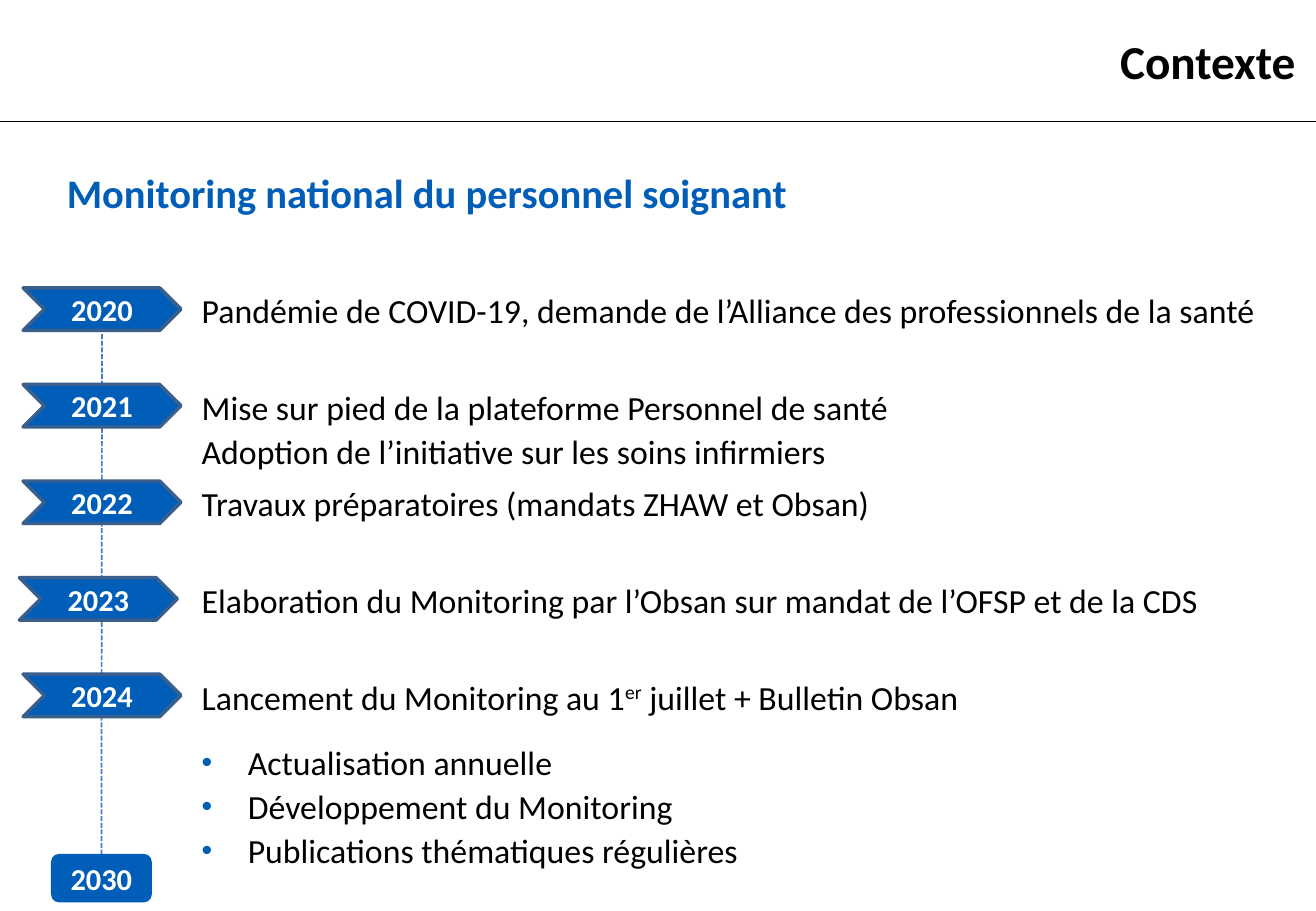
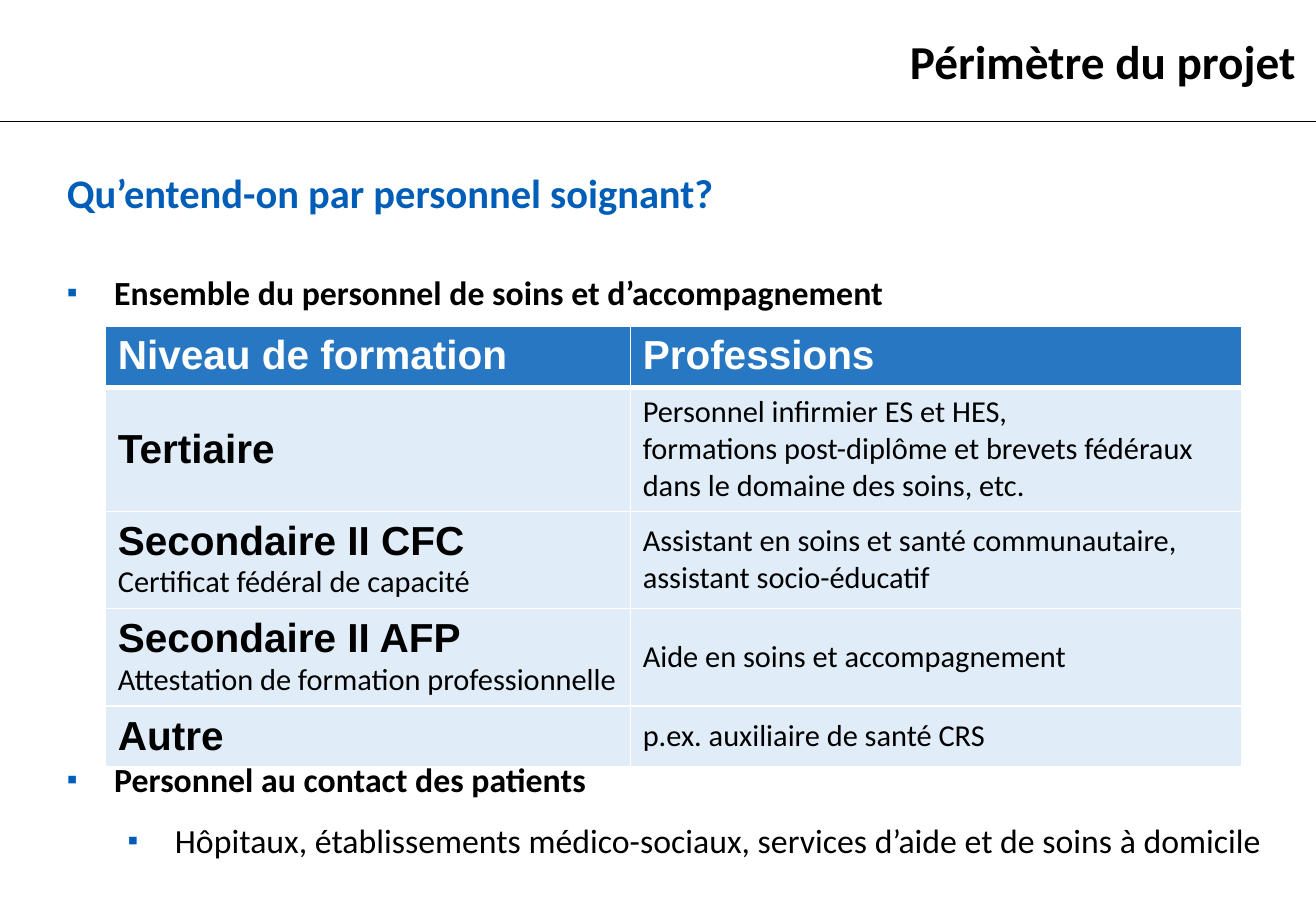
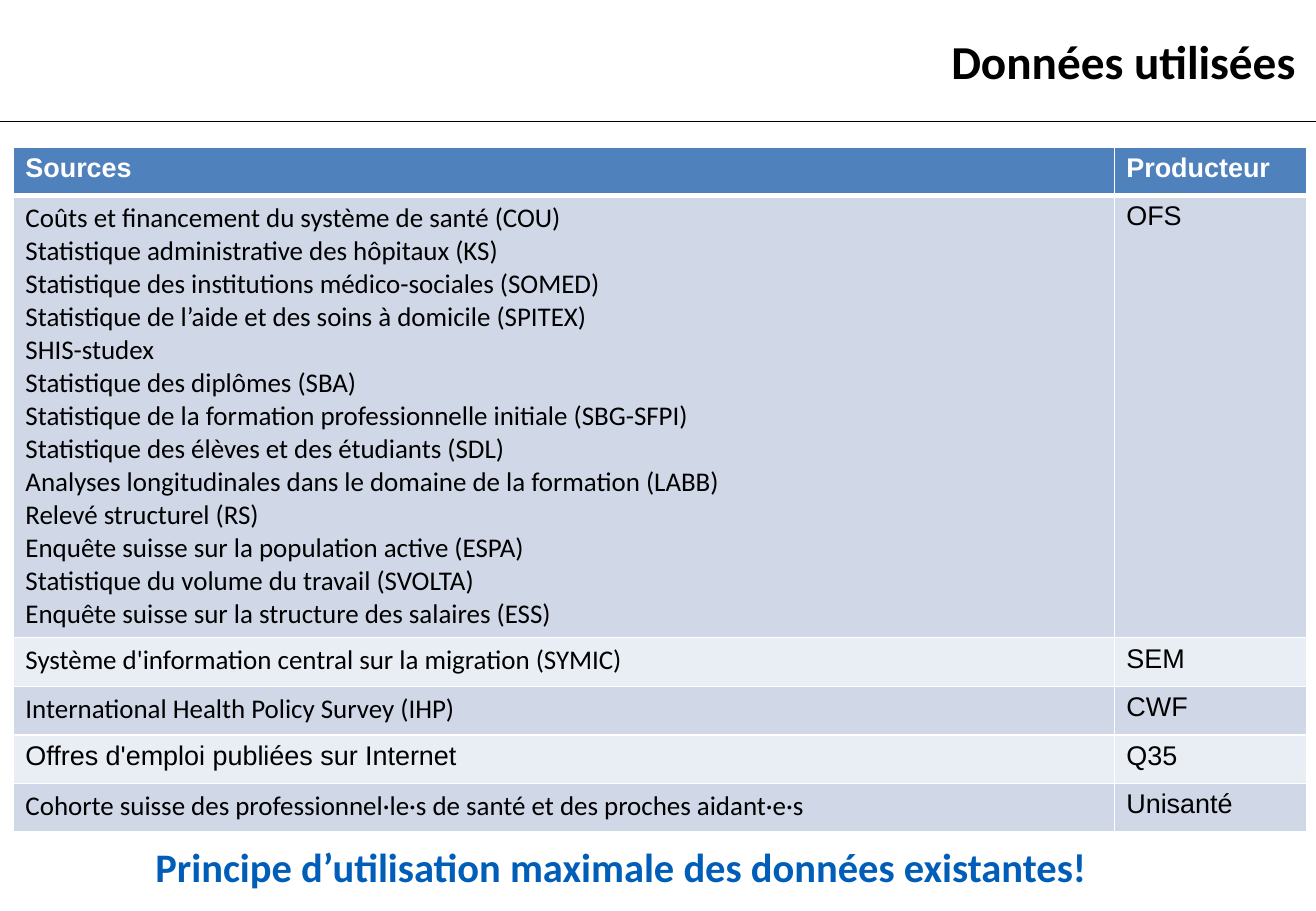
from dataclasses import dataclass
from typing import NamedTuple

from lxml.etree import SubElement
from pptx import Presentation
from pptx.dml.color import RGBColor
from pptx.enum.dml import MSO_LINE
from pptx.enum.shapes import MSO_CONNECTOR, MSO_SHAPE
from pptx.enum.text import MSO_ANCHOR, MSO_AUTO_SIZE, PP_ALIGN
from pptx.oxml.ns import qn
from pptx.util import Inches, Pt


class Style(NamedTuple):
    """Font settings of a run."""
    size: int
    color: str = "000000"
    bold: bool = False
    font: str = "Calibri"


class Run(NamedTuple):
    """Text with its own style, list level and superscript flag."""
    text: str
    style: Style
    level: int = 0
    raised: bool = False


@dataclass(frozen=True)
class Theme:
    """Colours and type styles shared by all slides."""
    accent: str = "005EB8"
    black: str = "000000"
    white: str = "FFFFFF"
    outline: str = "3A5F8C"
    timeline: str = "4B7EBC"
    level_header: str = "2777C3"
    level_body: str = "E0EDF8"
    source_header: str = "4F81BD"
    source_bands: tuple = ("D0D8E8", "E9EDF4")
    title: Style = Style(28, bold=True)
    subtitle: Style = Style(24, "005EB8", True)
    body: Style = Style(20)
    strong: Style = Style(20, bold=True)
    year: Style = Style(18, "FFFFFF", True)
    level_heading: Style = Style(24, "FFFFFF", True, "Arial")
    level_name: Style = Style(24, bold=True, font="Arial")
    level_text: Style = Style(18)
    source_heading: Style = Style(16, "FFFFFF", True, "Arial")
    source: Style = Style(16)
    producer: Style = Style(16, font="Arial")


THEME = Theme()


def rgb(color):
    """Turn a hex string into a colour."""
    return RGBColor.from_string(color)


def add_bullet(paragraph, symbol, hanging, level):
    """Give a paragraph an accent-coloured bullet and a hanging indent."""
    paragraph.level = level
    properties = paragraph._p.get_or_add_pPr()
    properties.set("marL", str(Inches(hanging + 0.5 * level)))
    properties.set("indent", str(-Inches(hanging)))
    color = SubElement(properties, qn("a:buClr"))
    SubElement(color, qn("a:srgbClr"), val=THEME.accent)
    SubElement(properties, qn("a:buSzPct"), val="90000")
    SubElement(properties, qn("a:buFont"), typeface="Arial")
    SubElement(properties, qn("a:buChar"), char=symbol)


def write(frame, lines, style=None, align=PP_ALIGN.LEFT, line_spacing=None,
          gap=0, bullet=None, hanging=0.39):
    """Fill a text frame with lines, each a string, a Run or a list of Runs."""
    for index, line in enumerate(lines):
        paragraph = frame.add_paragraph() if index else frame.paragraphs[0]
        if isinstance(line, str):
            line = Run(line, style)
        runs = [line] if isinstance(line, Run) else line
        if bullet:
            add_bullet(paragraph, bullet, hanging, runs[0].level)
        paragraph.alignment = align
        paragraph.space_before = Pt(gap if index else 0)
        if line_spacing:
            paragraph.line_spacing = Pt(line_spacing)
        for part in runs:
            run = paragraph.add_run()
            run.text = part.text
            run.font.name = part.style.font
            run.font.size = Pt(part.style.size)
            run.font.bold = part.style.bold
            run.font.color.rgb = rgb(part.style.color)
            if part.raised:
                run._r.get_or_add_rPr().set("baseline", "30000")


def add_borders(cell, **widths):
    """Draw white cell borders with the given widths in points."""
    properties = cell._tc.get_or_add_tcPr()
    for side in ("L", "R", "T", "B"):
        border = SubElement(properties, qn(f"a:ln{side}"),
                            w=str(Pt(widths.get(side, 1))))
        fill = SubElement(border, qn("a:solidFill"))
        SubElement(fill, qn("a:srgbClr"), val=THEME.white)


class Deck:
    """Builds slides in the shared style."""

    def __init__(self):
        """Start an empty presentation."""
        self.presentation = Presentation()
        self.presentation.slide_width = Inches(10.83)
        self.presentation.slide_height = Inches(7.5)
        self.slide = None

    def new_slide(self, title, subtitle=None):
        """Add a slide with its title, rule and optional subtitle."""
        layout = self.presentation.slide_layouts[5]
        self.slide = self.presentation.slides.add_slide(layout)
        shape = self.slide.shapes.title
        shape.left, shape.top = Inches(3.63), Inches(0)
        shape.width, shape.height = Inches(7.13), Inches(1)
        shape.text_frame.auto_size = MSO_AUTO_SIZE.NONE
        shape.text_frame.vertical_anchor = MSO_ANCHOR.MIDDLE
        write(shape.text_frame, [title], THEME.title, PP_ALIGN.RIGHT)
        self.line((0, 1), (10.83, 1), THEME.black)
        if subtitle:
            self.text(0.55, 1.38, 9.34, 0.4, [subtitle], style=THEME.subtitle)

    def line(self, start, end, color, dash=None):
        """Add a straight line one point wide."""
        points = [Inches(value) for value in (*start, *end)]
        connector = self.slide.shapes.add_connector(
            MSO_CONNECTOR.STRAIGHT, *points)
        connector.line.color.rgb = rgb(color)
        connector.line.width = Pt(1)
        if dash:
            connector.line.dash_style = dash
        SubElement(connector._element.spPr, qn("a:effectLst"))
        return connector

    def text(self, left, top, width, height, lines, **text_format):
        """Add a wrapping text box without margins."""
        box = self.slide.shapes.add_textbox(
            Inches(left), Inches(top), Inches(width), Inches(height))
        frame = box.text_frame
        frame.word_wrap = True
        frame.margin_left = frame.margin_right = 0
        frame.margin_top = frame.margin_bottom = 0
        write(frame, lines, **text_format)

    def year(self, kind, left, top, width, height, label, outline=None):
        """Add a filled shape with a year in it."""
        shape = self.slide.shapes.add_shape(
            kind, Inches(left), Inches(top), Inches(width), Inches(height))
        shape.shadow.inherit = False
        shape.fill.solid()
        shape.fill.fore_color.rgb = rgb(THEME.accent)
        if outline:
            shape.line.color.rgb = rgb(outline)
            shape.line.width = Pt(2)
        else:
            shape.line.fill.background()
        shape.text_frame.vertical_anchor = MSO_ANCHOR.MIDDLE
        write(shape.text_frame, [label], THEME.year, PP_ALIGN.CENTER)
        return shape

    def table(self, left, top, columns, heights, rows, header, bands,
              anchor=MSO_ANCHOR.TOP):
        """Add a table whose cells are lists of lines."""
        table = self.slide.shapes.add_table(
            len(rows), len(columns), Inches(left), Inches(top),
            Inches(sum(columns)), Inches(sum(heights))).table
        table.horz_banding = False
        for column, width in zip(table.columns, columns):
            column.width = Inches(width)
        for index, (row, height, contents) in enumerate(
                zip(table.rows, heights, rows)):
            row.height = Inches(height)
            color = bands[(index - 1) % len(bands)] if index else header
            for cell, lines in zip(row.cells, contents):
                add_borders(cell, T=3 if index == 1 else 1,
                            B=1 if index else 3)
                cell.fill.solid()
                cell.fill.fore_color.rgb = rgb(color)
                cell.vertical_anchor = anchor if index else MSO_ANCHOR.TOP
                write(cell.text_frame, lines)


def build_context(deck):
    """Build the timeline slide."""
    deck.new_slide("Contexte", "Monitoring national du personnel soignant")
    goal = deck.year(MSO_SHAPE.ROUNDED_RECTANGLE, 0.42, 7.03, 0.83, 0.4, "2030")
    axis = deck.line((0.84, 2.75), (0.84, 7.03), THEME.timeline,
                     MSO_LINE.SQUARE_DOT)
    axis.end_connect(goal, 0)
    body = THEME.body
    launch = [Run("Lancement du Monitoring au 1", body),
              Run("er", body, raised=True),
              Run(" juillet + Bulletin Obsan", body)]
    events = [
        ("2020", 0.19, ["Pandémie de COVID-19, demande de l’Alliance des "
                        "professionnels de la santé"]),
        ("2021", 0.19, ["Mise sur pied de la plateforme Personnel de santé",
                        "Adoption de l’initiative sur les soins infirmiers"]),
        ("2022", 0.19, ["Travaux préparatoires (mandats ZHAW et Obsan)"]),
        ("2023", 0.16, ["Elaboration du Monitoring par l’Obsan sur mandat de "
                        "l’OFSP et de la CDS"]),
        ("2024", 0.19, [launch]),
    ]
    for index, (label, left, lines) in enumerate(events):
        top = 2.37 + index * 0.795
        deck.year(MSO_SHAPE.CHEVRON, left, top, 1.3, 0.35, label, THEME.outline)
        deck.text(1.66, top - 0.01, 8.86, 0.36 * len(lines), lines,
                  style=body, line_spacing=26)
    deck.text(1.66, 6.08, 8.86, 1.08,
              ["Actualisation annuelle", "Développement du Monitoring",
               "Publications thématiques régulières"],
              style=body, line_spacing=26, bullet="•", hanging=0.38)


def build_scope(deck):
    """Build the slide on training levels."""
    deck.new_slide("Périmètre du projet", "Qu’entend-on par personnel soignant?")
    deck.text(0.55, 2.24, 10.06, 0.35,
              ["Ensemble du personnel de soins et d’accompagnement"],
              style=THEME.strong, bullet="▪")
    levels = [
        (["Tertiaire"],
         ["Personnel infirmier ES et HES,",
          "formations post-diplôme et brevets fédéraux dans le domaine des "
          "soins, etc."]),
        (["Secondaire II CFC", "Certificat fédéral de capacité"],
         ["Assistant en soins et santé communautaire, assistant "
          "socio-éducatif"]),
        (["Secondaire II AFP", "Attestation de formation professionnelle"],
         ["Aide en soins et accompagnement"]),
        (["Autre"], ["p.ex. auxiliaire de santé CRS"]),
    ]
    rows = [[[Run(text, THEME.level_heading)]
             for text in ("Niveau de formation", "Professions")]]
    for (name, *details), professions in levels:
        rows.append([
            [Run(name, THEME.level_name)]
            + [Run(text, THEME.level_text) for text in details],
            [Run(text, THEME.level_text) for text in professions]])
    deck.table(0.87, 2.69, (4.32, 5.03), (0.46, 1.02, 0.78, 0.78, 0.46), rows,
               THEME.level_header, (THEME.level_body,), MSO_ANCHOR.MIDDLE)
    deck.text(0.55, 6.25, 10.06, 0.85,
              [Run("Personnel au contact des patients", THEME.strong),
               Run("Hôpitaux, établissements médico-sociaux, services d’aide "
                   "et de soins à domicile", THEME.body, level=1)],
              gap=12, bullet="▪")


def build_sources(deck):
    """Build the slide on data sources."""
    deck.new_slide("Données utilisées")
    statistics = [
        "Coûts et financement du système de santé (COU)",
        "Statistique administrative des hôpitaux (KS)",
        "Statistique des institutions médico-sociales (SOMED)",
        "Statistique de l’aide et des soins à domicile (SPITEX)",
        "SHIS-studex",
        "Statistique des diplômes (SBA)",
        "Statistique de la formation professionnelle initiale (SBG-SFPI)",
        "Statistique des élèves et des étudiants (SDL)",
        "Analyses longitudinales dans le domaine de la formation (LABB)",
        "Relevé structurel (RS)",
        "Enquête suisse sur la population active (ESPA)",
        "Statistique du volume du travail (SVOLTA)",
        "Enquête suisse sur la structure des salaires (ESS)",
    ]
    source, producer = THEME.source, THEME.producer
    entries = [
        (["Sources"], "Producteur", THEME.source_heading, THEME.source_heading),
        (statistics, "OFS", source, producer),
        (["Système d'information central sur la migration (SYMIC)"], "SEM",
         source, producer),
        (["International Health Policy Survey (IHP)"], "CWF", source, producer),
        (["Offres d'emploi publiées sur Internet"], "Q35", producer, producer),
        (["Cohorte suisse des professionnel·le·s de santé et des proches "
          "aidant·e·s"], "Unisanté", source, producer),
    ]
    rows = [[[Run(text, left_style) for text in texts], [Run(name, right_style)]]
            for texts, name, left_style, right_style in entries]
    deck.table(0.11, 1.21, (9.06, 1.58), (0.4, 3.64, 0.4, 0.4, 0.4, 0.4), rows,
               THEME.source_header, THEME.source_bands)
    deck.text(1.28, 6.93, 8, 0.4,
              ["Principe d’utilisation maximale des données existantes!"],
              style=THEME.subtitle)


def main():
    """Build and save the presentation."""
    deck = Deck()
    build_context(deck)
    build_scope(deck)
    build_sources(deck)
    deck.presentation.save("out.pptx")


if __name__ == "__main__":
    main()
